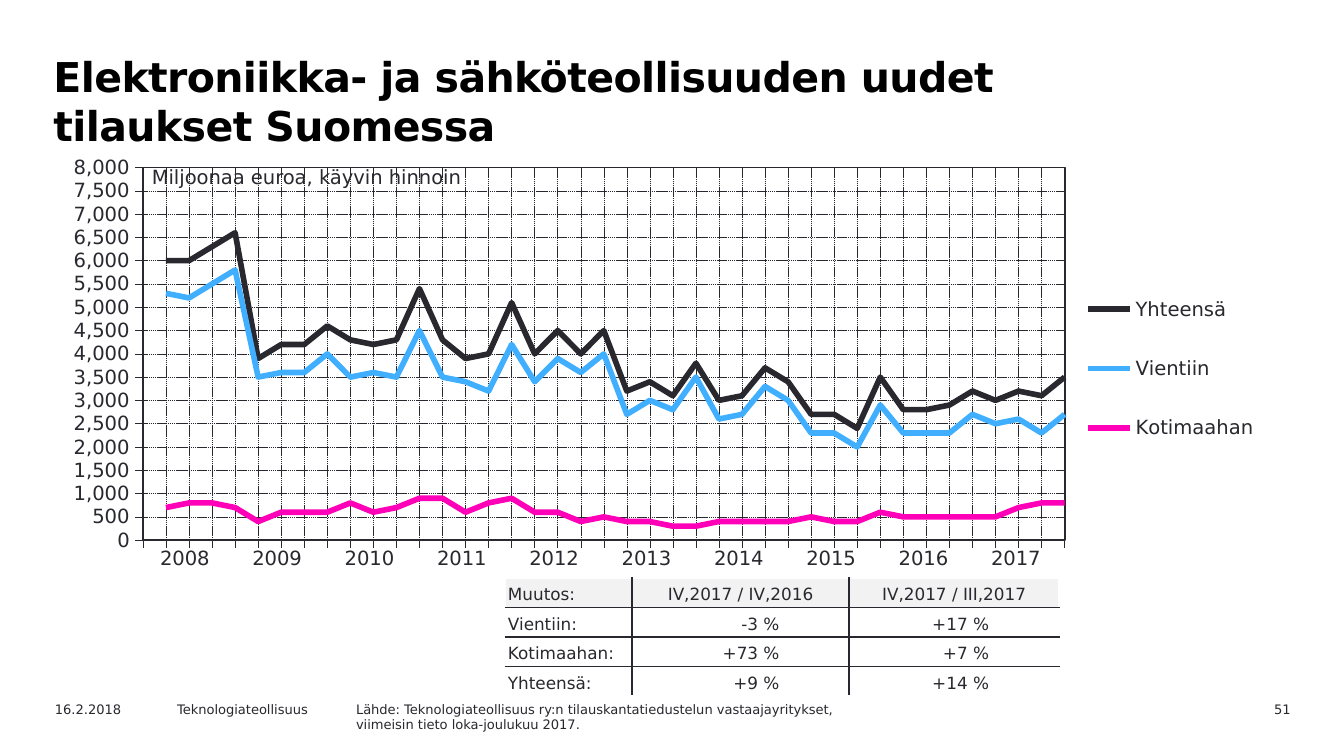
import lxml.etree
import pptx
import pptx.chart.data
import pptx.dml.color
import pptx.enum.chart
import pptx.enum.dml
import pptx.enum.text
import pptx.oxml.ns
import pptx.util

Cm, Pt = pptx.util.Cm, pptx.util.Pt
RGB = pptx.dml.color.RGBColor
qn = pptx.oxml.ns.qn
make = lxml.etree.SubElement
LEFT, MID, RIGHT = (pptx.enum.text.PP_ALIGN.LEFT, pptx.enum.text.PP_ALIGN.CENTER,
                    pptx.enum.text.PP_ALIGN.RIGHT)

BLACK = RGB(0x00, 0x00, 0x00)
INK = RGB(0x29, 0x28, 0x2E)
BLUE = RGB(0x40, 0xAF, 0xFF)
PINK = RGB(0xFF, 0x00, 0xB8)
GREY = RGB(0xF2, 0xF2, 0xF2)
WHITE = RGB(0xFF, 0xFF, 0xFF)
FONT = "DejaVu Sans"
PLAIN = "{2D5ABB26-0587-4C30-8999-92F81FD0307C}"


def write(frame, lines, size, align=LEFT, color=INK, bold=False):
    for i, line in enumerate(lines):
        para = frame.add_paragraph() if i else frame.paragraphs[0]
        para.alignment = align
        run = para.add_run()
        run.text = line
        font = run.font
        font.name, font.size, font.bold = FONT, Pt(size), bold
        font.color.rgb = color


def place(parent, index, x, y, w, h, inner=False):
    """Give a chart part a fixed layout, as fractions of the chart."""
    for old in parent.findall(qn("c:layout")):
        parent.remove(old)
    layout = lxml.etree.Element(qn("c:layout"))
    parent.insert(index, layout)
    manual = make(layout, qn("c:manualLayout"))
    if inner:
        make(manual, qn("c:layoutTarget"), val="inner")
    for tag, val in (("xMode", "edge"), ("yMode", "edge"),
                     ("x", x), ("y", y), ("w", w), ("h", h)):
        make(manual, qn("c:" + tag), val=str(val))


deck = pptx.Presentation()
deck.slide_width, deck.slide_height = Cm(25.4), Cm(14.29)
slide = deck.slides.add_slide(deck.slide_layouts[5])
shapes = slide.shapes

# Title
title = shapes.title
title.left, title.top, title.width, title.height = Cm(0.71), Cm(0.79), Cm(22.2), Cm(1.8)
frame = title.text_frame
frame.word_wrap = True
frame.auto_size = pptx.enum.text.MSO_AUTO_SIZE.NONE
frame.vertical_anchor = pptx.enum.text.MSO_ANCHOR.TOP
frame.margin_left, frame.margin_top = Cm(0.3), Cm(0.18)
write(frame, ["Elektroniikka- ja sähköteollisuuden uudet tilaukset Suomessa"],
      22, color=BLACK, bold=True)
frame.paragraphs[0].runs[0].font._element.set("spc", "-30")

# Footer
for left, width, align, lines in (
    (22.25, 2.39, RIGHT, ["51"]),
    (0.79, 2.54, LEFT, ["16.2.2018"]),
    (3.1, 3.61, LEFT, ["Teknologiateollisuus"]),
    (6.48, 12.88, LEFT, [
        "Lähde: Teknologiateollisuus ry:n tilauskantatiedustelun vastaajayritykset,",
        "viimeisin tieto loka-joulukuu 2017."]),
):
    box = shapes.add_textbox(Cm(left), Cm(13.13), Cm(width), Cm(0.46))
    box.text_frame.word_wrap = True
    write(box.text_frame, lines, 7, align)

# Quarterly orders, after one empty starting point
series = (
    ("Yhteensä", INK, [
        6000, 6000, 6300, 6600, 3900, 4200, 4200, 4600, 4300, 4200, 4300, 5400, 4300, 3900,
        4000, 5100, 4000, 4500, 4000, 4500, 3200, 3400, 3100, 3800, 3000, 3100, 3700, 3400,
        2700, 2700, 2400, 3500, 2800, 2800, 2900, 3200, 3000, 3200, 3100, 3500]),
    ("Vientiin", BLUE, [
        5300, 5200, 5500, 5800, 3500, 3600, 3600, 4000, 3500, 3600, 3500, 4500, 3500, 3400,
        3200, 4200, 3400, 3900, 3600, 4000, 2700, 3000, 2800, 3500, 2600, 2700, 3300, 3000,
        2300, 2300, 2000, 2900, 2300, 2300, 2300, 2700, 2500, 2600, 2300, 2700]),
    ("Kotimaahan", PINK, [
        700, 800, 800, 700, 400, 600, 600, 600, 800, 600, 700, 900, 900, 600,
        800, 900, 600, 600, 400, 500, 400, 400, 300, 300, 400, 400, 400, 400,
        500, 400, 400, 600, 500, 500, 500, 500, 500, 700, 800, 800]),
)
data = pptx.chart.data.CategoryChartData(number_format="#,##0")
data.categories = [str(n) for n in range(1, 42)]
for name, color, vals in series:
    data.add_series(name, [None] + vals)
chart = shapes.add_chart(pptx.enum.chart.XL_CHART_TYPE.LINE, Cm(0.79), Cm(2.82),
                         Cm(23.32), Cm(8.46), data).chart
chart.has_title = False
chart.font.name, chart.font.size = FONT, Pt(10.5)
chart.font.color.rgb = INK
chart.plots[0].vary_by_categories = False
for line, (name, color, vals) in zip(chart.plots[0].series, series):
    line.smooth = False
    line.format.line.width = Pt(3)
    line.format.line.color.rgb = color

cats, vals = chart.category_axis, chart.value_axis
for axis in (cats, vals):
    axis.major_tick_mark = pptx.enum.chart.XL_TICK_MARK.OUTSIDE
    axis.has_major_gridlines = True
    grid = axis.major_gridlines.format.line
    grid.dash_style = pptx.enum.dml.MSO_LINE.SQUARE_DOT
    for rule in (grid, axis.format.line):
        rule.width = Pt(0.25)
        rule.color.rgb = INK
cats.tick_label_position = pptx.enum.chart.XL_TICK_LABEL_POSITION.NONE
vals.minimum_scale, vals.maximum_scale, vals.major_unit = 0, 8000, 500
vals.tick_labels.number_format = "#,##0"
vals.tick_labels.number_format_is_linked = False

# Points sit on the tick marks
node = vals._element
for old in node.findall(qn("c:crossBetween")):
    node.remove(old)
cross = lxml.etree.Element(qn("c:crossBetween"), val="midCat")
node.find(qn("c:crosses")).addnext(cross)

# Plot frame and legend
area = node.getparent()
place(area, 0, 0.082, 0.041, 0.747, 0.833, inner=True)
look = make(area, qn("c:spPr"))
make(look, qn("a:noFill"))
edge = make(look, qn("a:ln"), w=str(Pt(1)))
make(make(edge, qn("a:solidFill")), qn("a:srgbClr"), val=str(INK))
chart.has_legend = True
legend = chart.legend
legend.position = pptx.enum.chart.XL_LEGEND_POSITION.RIGHT
legend.include_in_layout = False
legend.font.name, legend.font.size = FONT, Pt(10.5)
legend.font.color.rgb = INK
place(legend._element, 1, 0.84, 0.25, 0.15, 0.48)

# Year labels and table of changes
years = shapes.add_table(1, 10, Cm(2.62), Cm(10.21), Cm(17.45), Cm(0.79))
table = shapes.add_table(4, 3, Cm(9.55), Cm(10.92), Cm(10.46), Cm(2.24))
for item in (years, table):
    item.table.first_row = item.table.horz_banding = False
    for style in item._element.iter(qn("a:tableStyleId")):
        style.text = PLAIN

for i, cell in enumerate(years.table.iter_cells()):
    cell.fill.background()
    write(cell.text_frame, [str(2008 + i)], 10.5, MID)

for col, width in zip(table.table.columns, (2.39, 4.11, 3.96)):
    col.width = Cm(width)
rows = (
    ("Muutos:", "IV,2017 / IV,2016", "IV,2017 / III,2017"),
    ("Vientiin:", "-3 %", "+17 %"),
    ("Kotimaahan:", "+73 %", "+7 %"),
    ("Yhteensä:", "+9 %", "+14 %"),
)
for r, row in enumerate(rows):
    for c, text in enumerate(row):
        cell = table.table.cell(r, c)
        number = r > 0 and c > 0
        cell.margin_left = cell.margin_top = cell.margin_bottom = Cm(0.05)
        cell.margin_right = Cm(1.32 if number else 0.05)
        cell.vertical_anchor = pptx.enum.text.MSO_ANCHOR.BOTTOM
        write(cell.text_frame, [text], 9, RIGHT if number else MID if c else LEFT)
        cell.fill.solid()
        cell.fill.fore_color.rgb = WHITE if r else GREY
        # Inner borders are dark, outer ones white
        props = cell._tc.get_or_add_tcPr()
        sides = (("L", c > 0), ("R", c < 2), ("T", r > 0), ("B", r < 3))
        for i, (side, dark) in enumerate(sides):
            edge = lxml.etree.Element(qn("a:ln" + side), w=str(Pt(1)))
            make(make(edge, qn("a:solidFill")), qn("a:srgbClr"),
                 val=str(INK if dark else WHITE))
            props.insert(i, edge)

# Unit of the value axis
unit = shapes.add_textbox(Cm(2.62), Cm(3), Cm(6.6), Cm(0.69))
unit.text_frame.word_wrap = False
write(unit.text_frame, ["Miljoonaa euroa, käyvin hinnoin"], 10.5)

deck.save("out.pptx")
